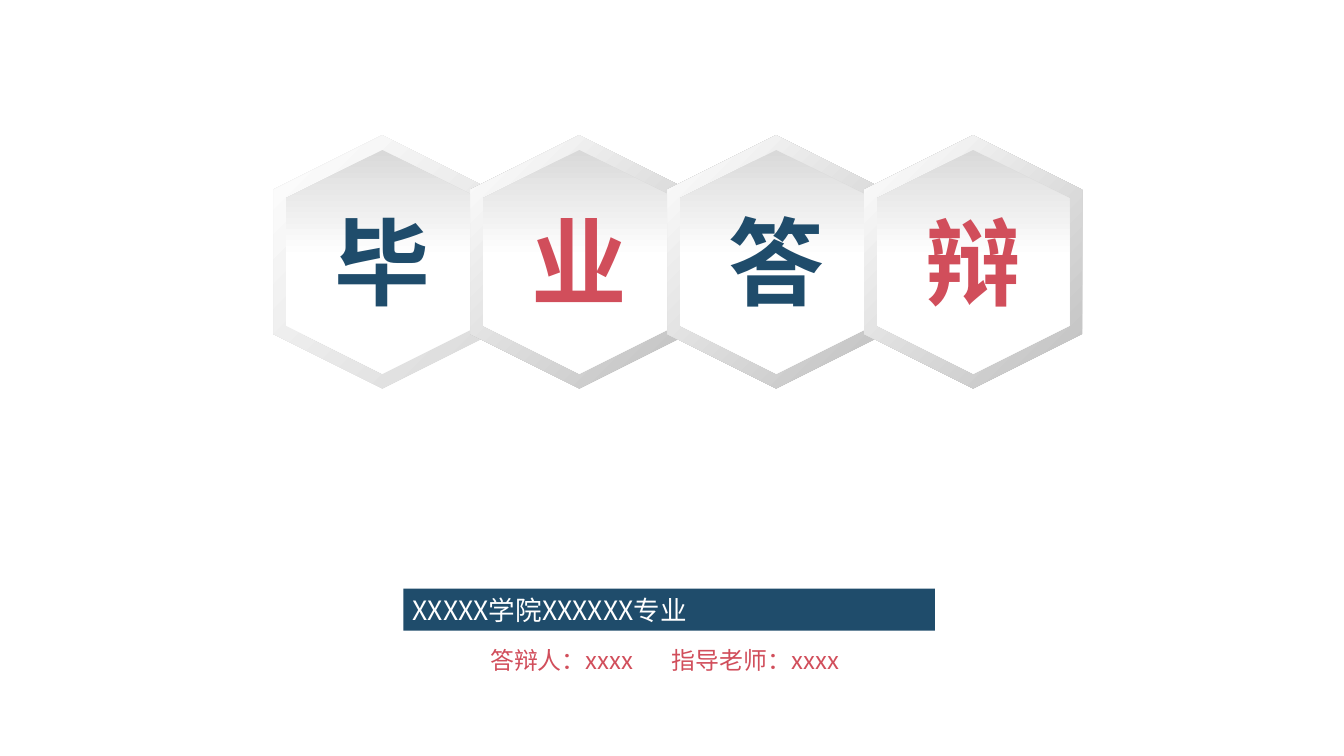
import pptx
import pptx.util
import pptx.dml.color
import pptx.enum.shapes
import pptx.enum.text
import pptx.oxml

Inches = pptx.util.Inches
Shape = pptx.enum.shapes.MSO_SHAPE
Align = pptx.enum.text.PP_ALIGN
NAVY, RED, WHITE = "1F4C6B", "D14E5B", "FFFFFF"
FONT = "Noto Sans CJK SC"


def paint(target, tone):
    target.rgb = pptx.dml.color.RGBColor.from_string(tone)


def write(shape, text, size, tone, face=FONT, bold=False, align=Align.LEFT, pad=0.1, low=0, tab=None):
    frame = shape.text_frame
    frame.word_wrap = True
    frame.vertical_anchor = pptx.enum.text.MSO_ANCHOR.MIDDLE
    frame.margin_left = frame.margin_right = Inches(pad)
    frame.margin_top, frame.margin_bottom = 0, Inches(low)
    para = frame.paragraphs[0]
    para.alignment = align
    if tab:
        props = para._p.get_or_add_pPr()
        stops = pptx.oxml.parse_xml(
            '<a:tabLst xmlns:a="http://schemas.openxmlformats.org/drawingml/2006/main">'
            f'<a:tab pos="{Inches(tab)}" algn="l"/></a:tabLst>')
        props.append(stops)
    run = para.add_run()
    run.text = text
    font = run.font
    font.size, font.bold, font.name = pptx.util.Pt(size), bold, face
    paint(font.color, tone)
    east = pptx.oxml.parse_xml(
        '<a:ea xmlns:a="http://schemas.openxmlformats.org/drawingml/2006/main" '
        f'typeface="{FONT}"/>')
    run._r.get_or_add_rPr().append(east)


def add_hex(group, mid_x, mid_y, length, width, dark, end, angle):
    shape = group.shapes.add_shape(
        Shape.HEXAGON, Inches(mid_x - length / 2), Inches(mid_y - width / 2),
        Inches(length), Inches(width))
    shape.rotation = 90
    shape.shadow.inherit = False
    shape.line.fill.background()
    shape.fill.gradient()
    shape.fill.gradient_angle = angle
    for stop, place, tone in zip(shape.fill.gradient_stops, (0, end), (dark, WHITE)):
        stop.position = place
        paint(stop.color, tone)


def add_badge(slide, mid_x, mid_y, glyph, tone, rim):
    group = slide.shapes.add_group_shape()
    add_hex(group, mid_x, mid_y, 2.65, 2.28, rim, 1, 225)
    add_hex(group, mid_x, mid_y, 2.34, 2.02, "D9D9D9", 0.48, 0)
    label = group.shapes.add_textbox(
        Inches(mid_x - 0.93), Inches(mid_y - 0.57), Inches(1.86), Inches(1.21))
    write(label, glyph, 72, tone, "Arial", True, Align.CENTER, pad=0, low=0.1)


def add_title(slide, left, mid_y, step):
    tones = (NAVY, RED, NAVY, RED)
    rims = ("D9D9D9", "BFBFBF", "BFBFBF", "BFBFBF")
    for i, (glyph, tone, rim) in enumerate(zip("毕业答辩", tones, rims)):
        add_badge(slide, left + i * step, mid_y, glyph, tone, rim)


def add_credits(slide, left, top, width):
    bar = slide.shapes.add_shape(
        Shape.RECTANGLE, Inches(left), Inches(top), Inches(width), Inches(0.44))
    bar.shadow.inherit = False
    bar.fill.solid()
    paint(bar.fill.fore_color, NAVY)
    bar.line.fill.background()
    write(bar, "XXXXX学院XXXXXX专业", 20, WHITE)
    names = slide.shapes.add_textbox(
        Inches(left + 0.81), Inches(top + 0.55), Inches(width - 0.8), Inches(0.4))
    write(names, "答辩人：xxxx\t指导老师：xxxx", 18, RED, tab=1.9)


def main():
    deck = pptx.Presentation()
    deck.slide_width, deck.slide_height = Inches(14.06), Inches(7.91)
    slide = deck.slides.add_slide(deck.slide_layouts[6])
    add_title(slide, 4, 2.74, 2.06)
    add_credits(slide, 4.22, 6.16, 5.56)
    deck.save("out.pptx")


if __name__ == "__main__":
    main()
